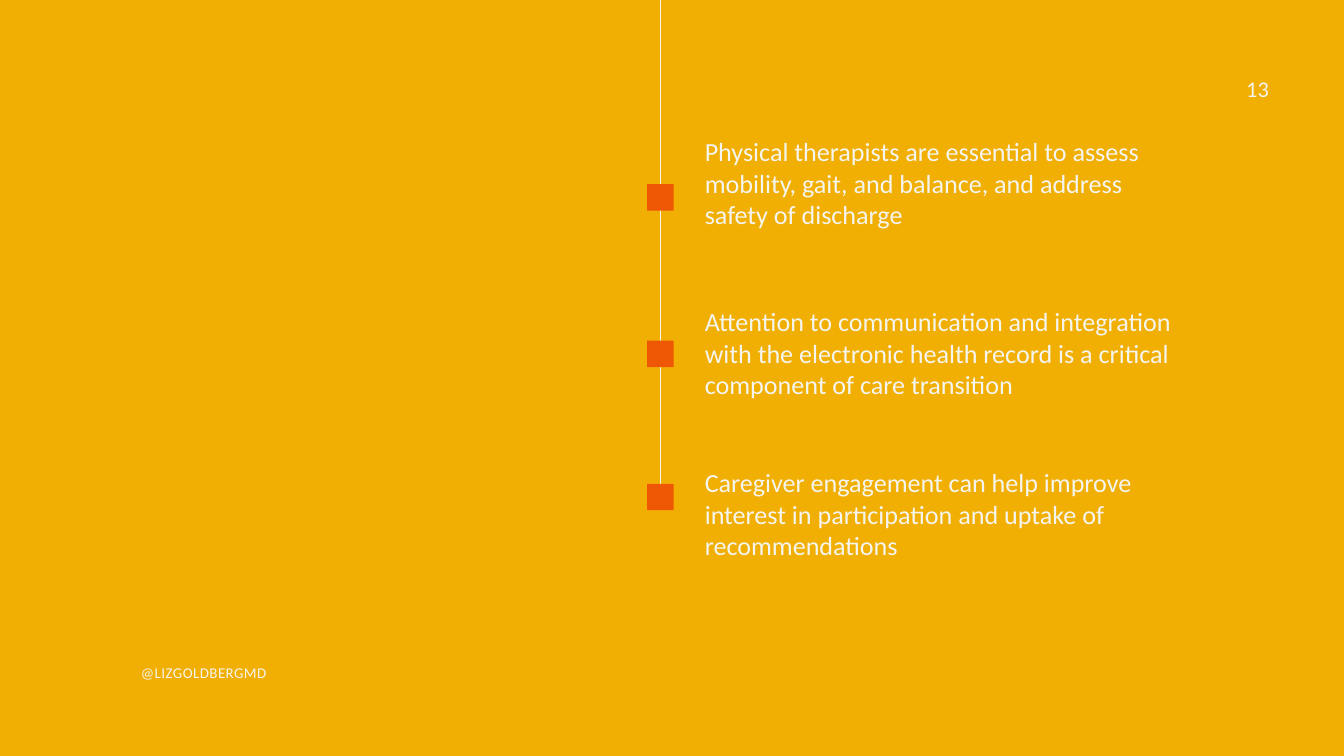
from dataclasses import dataclass

from lxml import etree
from pptx import Presentation
from pptx.dml.color import RGBColor
from pptx.enum.shapes import MSO_CONNECTOR, MSO_SHAPE
from pptx.enum.text import MSO_AUTO_SIZE, PP_ALIGN
from pptx.oxml.ns import qn
from pptx.shapes.autoshape import Shape
from pptx.shapes.connector import Connector
from pptx.slide import Slide
from pptx.util import Cm, Pt

LEFT, RIGHT = PP_ALIGN.LEFT, PP_ALIGN.RIGHT
RECT = MSO_SHAPE.RECTANGLE
STRAIGHT = MSO_CONNECTOR.STRAIGHT
FIT = MSO_AUTO_SIZE.SHAPE_TO_FIT_TEXT

FONT = "Calibri"
GOLD, CREAM, ORANGE = "F1AE03", "F5F5EF", "EE5703"
SIDE = 1.0
MARK_X = 24.46
AXIS = MARK_X + SIDE / 2
TOP = 0


@dataclass
class Label:
    text: str
    left: float
    top: float
    width: float
    height: float
    size: float
    pitch: float
    align: PP_ALIGN = LEFT
    track: int = 0


@dataclass
class Point:
    text: str
    top: float
    height: float
    mark: float


POINTS = [
    Point("Physical therapists are essential to assess mobility, gait, "
          "and balance, and address safety of discharge", 5.13, 3.51, 6.96),
    Point("Attention to communication and integration with the electronic "
          "health record is a critical component of care transition",
          11.56, 4.65, 12.88),
    Point("Caregiver engagement can help improve interest in participation "
          "and uptake of recommendations", 17.65, 3.51, 18.29),
]
FOOTER = Label("@LIZGOLDBERGMD", 5.33, 24.97, 19.13, 0.76, 16, 22.4, track=50)
NUMBER = Label("13", 46.41, 3.0, 1.55, 0.79, 24, 24, RIGHT)


def color(code: str) -> RGBColor:
    return RGBColor.from_string(code)


def add_label(slide: Slide, label: Label) -> None:
    box = slide.shapes.add_textbox(
        Cm(label.left), Cm(label.top), Cm(label.width), Cm(label.height))
    frame = box.text_frame
    frame.margin_left = frame.margin_right = 0
    frame.margin_top = frame.margin_bottom = 0
    frame.word_wrap = True
    frame.auto_size = FIT
    frame.text = label.text
    para = frame.paragraphs[0]
    para.alignment = label.align
    para.line_spacing = Pt(label.pitch)
    font = para.runs[0].font
    font.name = FONT
    font.size = Pt(label.size)
    font.color.rgb = color(CREAM)
    if label.track:
        para.runs[0]._r.get_or_add_rPr().set("spc", str(label.track))


def add_mark(slide: Slide, top: float) -> Shape:
    mark = slide.shapes.add_shape(
        RECT, Cm(MARK_X), Cm(top), Cm(SIDE), Cm(SIDE))
    mark.shadow.inherit = False
    mark.fill.solid()
    mark.fill.fore_color.rgb = color(ORANGE)
    mark.line.fill.background()
    return mark


def add_axis(slide: Slide, end: float) -> Connector:
    axis = slide.shapes.add_connector(
        STRAIGHT, Cm(AXIS), Cm(0), Cm(AXIS), Cm(end))
    axis.line.color.rgb = color(CREAM)
    axis.line.width = Pt(0.75)
    etree.SubElement(axis._element.spPr, qn("a:effectLst"))
    return axis


def main() -> None:
    deck = Presentation()
    deck.slide_width, deck.slide_height = Cm(50.8), Cm(28.58)
    slide = deck.slides.add_slide(deck.slide_layouts[6])
    slide.background.fill.solid()
    slide.background.fill.fore_color.rgb = color(GOLD)

    for point in POINTS:
        add_label(slide, Label(
            point.text, 26.64, point.top, 18.19, point.height, 28, 33.6))

    axis = add_axis(slide, POINTS[-1].mark)
    marks = [add_mark(slide, point.mark) for point in POINTS]
    axis.end_connect(marks[-1], TOP)

    add_label(slide, FOOTER)
    add_label(slide, NUMBER)
    deck.save("out.pptx")


if __name__ == "__main__":
    main()
